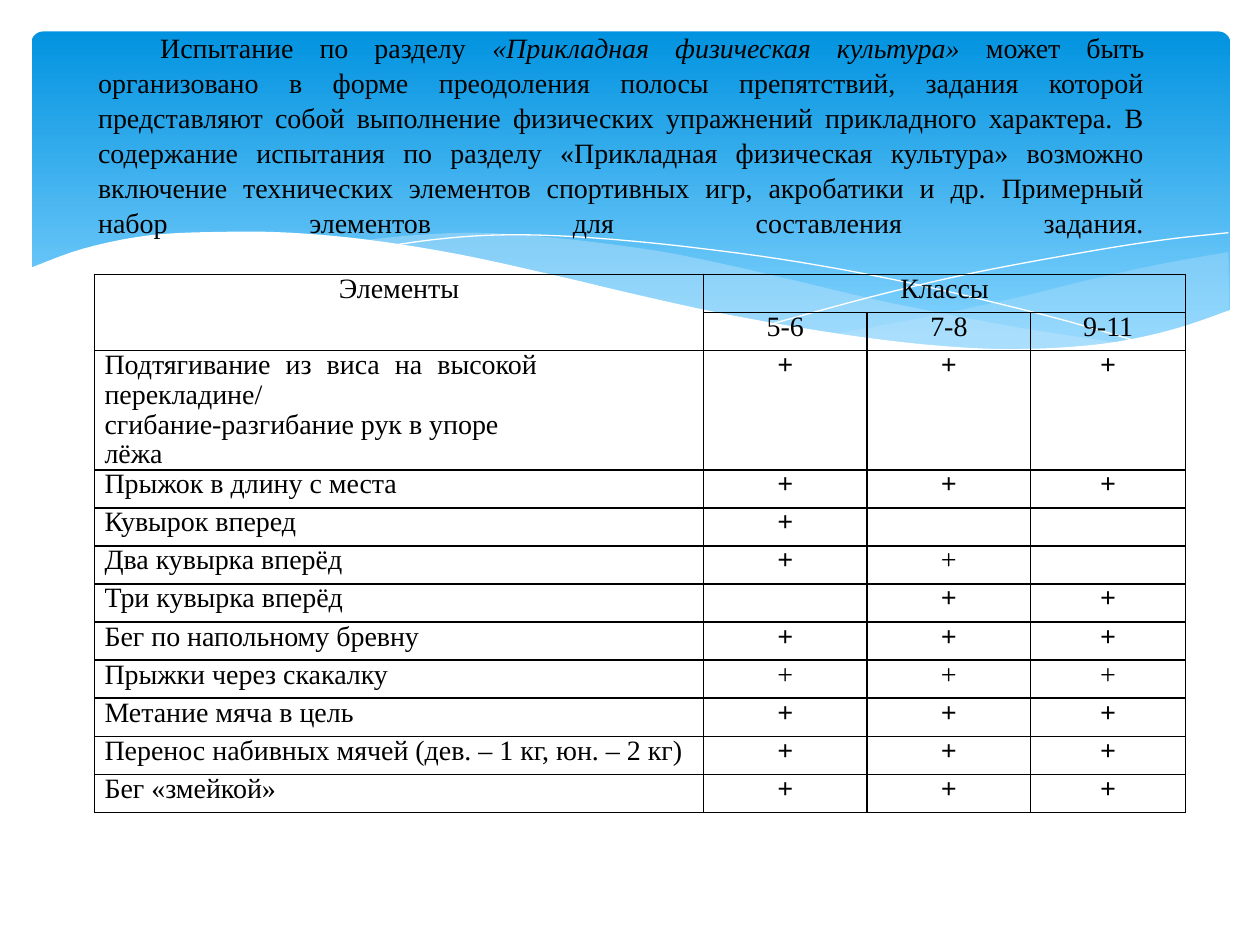
from lxml.etree import SubElement
from pptx import Presentation
from pptx.dml.color import RGBColor
from pptx.enum.shapes import MSO_SHAPE as Shape
from pptx.enum.text import MSO_ANCHOR as Anchor, PP_ALIGN as Align
from pptx.oxml.ns import qn
from pptx.util import Pt

BLACK = RGBColor(0, 0, 0)
WHITE = RGBColor(0xFF, 0xFF, 0xFF)
SKY_TOP = RGBColor(0x02, 0x93, 0xE0)
SKY_BOTTOM = RGBColor(0x83, 0xD3, 0xFE)
MIST = RGBColor(0xC6, 0xE7, 0xFC)
FONT = "Times New Roman"

RIGHT_WAVE_TOP = [(684, 126), (645, 133), (602, 142.5), (561.5, 152.5), (507, 164), (458, 173)]
RIGHT_WAVE_BOTTOM = [(458, 173), (500, 178), (535.5, 181.5), (575.5, 181.5), (616.5, 178.5),
                     (650, 171.5), (684.5, 160)]
LEFT_WAVE_TOP = [(188, 119.5), (218, 116.5), (255.5, 115), (300, 118), (352, 124.5), (391.5, 132),
                 (435, 142), (490.5, 155), (563, 169), (625, 178.5)]
LEFT_WAVE_BOTTOM = [(625, 178.5), (599, 181.5), (563, 182), (520.5, 180.5), (471.5, 175),
                    (414.5, 165.5), (363.5, 155), (305.5, 142), (258, 131), (228, 125.5), (188, 119.5)]
FALLING_LINE = [(204.5, 122.5), (229.5, 119), (260.5, 116.5), (294, 116.5), (334, 119), (382.5, 124),
                (440, 132), (505.5, 144.5), (580.5, 162.5), (635, 178)]
RISING_LINE = [(423.5, 167), (482.5, 151), (540.5, 137.5), (605.5, 125.5), (647.5, 119), (684, 115)]
WHITE_CREST = [(685.5, 159), (651.5, 170.5), (612, 178.5), (564.5, 181.5), (517.5, 179.5), (463, 173),
               (399, 162), (344, 150), (304, 140.5), (245, 127.5), (192, 119), (147.5, 115),
               (109.5, 114.5), (67.5, 116.5), (30, 124), (-1.5, 135.5)]
WHITE_BASE = [(-1.5, 219), (685.5, 219)]

INTRO = [
    ("Испытание по разделу ", False),
    ("«Прикладная физическая культура» ", True),
    ("может быть организовано в форме преодоления полосы препятствий, задания которой "
     "представляют собой выполнение физических упражнений прикладного характера. В содержание "
     "испытания по разделу «Прикладная физическая культура» возможно включение технических "
     "элементов спортивных игр, акробатики и др. Примерный набор элементов для составления "
     "задания.", False),
]

GRADES = ["5-6", "7-8", "9-11"]
PLUS, BOLD_PLUS, NONE = ("+", False), ("+", True), ("", False)
EXERCISES = [
    ("Подтягивание из виса на высокой перекладине/\nсгибание-разгибание рук в упоре лёжа",
     [BOLD_PLUS] * 3),
    ("Прыжок в длину с места", [BOLD_PLUS] * 3),
    ("Кувырок вперед", [BOLD_PLUS, NONE, NONE]),
    ("Два кувырка вперёд", [BOLD_PLUS, PLUS, NONE]),
    ("Три кувырка вперёд", [NONE, BOLD_PLUS, BOLD_PLUS]),
    ("Бег по напольному бревну", [BOLD_PLUS] * 3),
    ("Прыжки через скакалку", [PLUS] * 3),
    ("Метание мяча в цель", [BOLD_PLUS] * 3),
    ("Перенос набивных мячей (дев. – 1 кг, юн. – 2 кг)", [BOLD_PLUS] * 3),
    ("Бег «змейкой»", [BOLD_PLUS] * 3),
]
COLUMN_WIDTHS = [348, 93.5, 93.5, 88.5]
ROW_HEIGHT, TALL_ROW_HEIGHT = 21.75, 53.2


def smooth(knots, steps=5):
    """Return points of a Catmull-Rom curve through the knots."""
    padded = [knots[0], *knots, knots[-1]]
    curve = [knots[0]]
    for a, b, c, d in zip(padded, padded[1:], padded[2:], padded[3:]):
        for step in range(1, steps + 1):
            t = step / steps
            curve.append(tuple(
                (2 * q + (r - p) * t + (2 * p - 5 * q + 4 * r - s) * t ** 2
                 + (3 * q - p - 3 * r + s) * t ** 3) / 2
                for p, q, r, s in zip(a, b, c, d)))
    return curve


def add_outline(slide, left, top, points, closed):
    """Draw a path whose points are offsets from the given corner."""
    places = [(Pt(left + x), Pt(top + y)) for x, y in points]
    builder = slide.shapes.build_freeform(*places[0], scale=1.0)
    builder.add_line_segments(places[1:], close=closed)
    outline = builder.convert_to_shape()
    outline.shadow.inherit = False
    return outline


def add_wave(slide, left, top, points, color, opacity=100):
    """Draw a filled wave without a border."""
    wave = add_outline(slide, left, top, points, True)
    wave.fill.solid()
    wave.fill.fore_color.rgb = color
    wave.line.fill.background()
    if opacity < 100:
        tint = wave.element.spPr.find(".//" + qn("a:srgbClr"))
        SubElement(tint, qn("a:alpha"), val=str(opacity * 1000))


def add_banner(slide, left, top, width, height):
    """Draw the blue gradient banner with its waves."""
    sky = slide.shapes.add_shape(Shape.ROUNDED_RECTANGLE, Pt(left), Pt(top), Pt(width), Pt(height))
    sky.adjustments[0] = 0.034
    sky.shadow.inherit = False
    sky.line.fill.background()
    sky.fill.gradient()
    sky.fill.gradient_angle = 270
    for stop, color, position in zip(sky.fill.gradient_stops, (SKY_TOP, SKY_BOTTOM), (0, 0.9)):
        stop.color.rgb = color
        stop.position = position
    add_wave(slide, left, top, smooth(RIGHT_WAVE_TOP) + smooth(RIGHT_WAVE_BOTTOM), MIST, 29)
    add_wave(slide, left, top, smooth(LEFT_WAVE_TOP) + smooth(LEFT_WAVE_BOTTOM), MIST, 40)
    for knots in (FALLING_LINE, RISING_LINE):
        streak = add_outline(slide, left, top, smooth(knots), False)
        streak.fill.background()
        streak.line.color.rgb = WHITE
        streak.line.width = Pt(0)
    add_wave(slide, left, top, smooth(WHITE_CREST) + WHITE_BASE, WHITE)


def style_run(run, bold=False, italic=False):
    """Apply the common font to a run."""
    run.font.name = FONT
    run.font.size = Pt(16)
    run.font.color.rgb = BLACK
    run.font.bold = bold
    run.font.italic = italic


def add_intro(slide, left, top, width, height):
    """Place the justified introduction."""
    frame = slide.shapes.add_textbox(Pt(left), Pt(top), Pt(width), Pt(height)).text_frame
    frame.word_wrap = True
    frame.vertical_anchor = Anchor.MIDDLE
    paragraph = frame.paragraphs[0]
    paragraph.alignment = Align.JUSTIFY
    paragraph.line_spacing = 1.04
    indents = paragraph._p.get_or_add_pPr()
    for side, amount in (("marL", 13), ("marR", 23), ("indent", 35.5)):
        indents.set(side, str(Pt(amount)))
    for text, italic in INTRO:
        run = paragraph.add_run()
        run.text = text
        style_run(run, italic=italic)
    paragraph.add_line_break()
    SubElement(paragraph._p, qn("a:endParaRPr"), sz="1600")


def fill_cell(cell, text="", bold=False, align=Align.CENTER, indent=0):
    """Write one bordered, unfilled cell."""
    cell.margin_left = cell.margin_right = cell.margin_top = cell.margin_bottom = 0
    cell.text_frame.text = text
    for paragraph in cell.text_frame.paragraphs:
        paragraph.alignment = align
        paragraph.line_spacing = 0.96
        paragraph._p.get_or_add_pPr().set("marL", str(Pt(indent)))
        for run in paragraph.runs:
            style_run(run, bold)
        if not text:
            SubElement(paragraph._p, qn("a:endParaRPr"), sz="1600")
    borders = cell._tc.get_or_add_tcPr()
    for side in ("a:lnL", "a:lnR", "a:lnT", "a:lnB"):
        border = SubElement(borders, qn(side), w=str(Pt(1)))
        SubElement(SubElement(border, qn("a:solidFill")), qn("a:srgbClr"), val=str(BLACK))
    cell.fill.background()


def add_exercises(slide, left, top):
    """Place the table of exercises by grade."""
    heights = [ROW_HEIGHT] * 2 + [TALL_ROW_HEIGHT] + [ROW_HEIGHT] * (len(EXERCISES) - 1)
    table = slide.shapes.add_table(len(heights), len(COLUMN_WIDTHS), Pt(left), Pt(top),
                                   Pt(sum(COLUMN_WIDTHS)), Pt(sum(heights))).table
    table.first_row = table.horz_banding = False
    for column, width in zip(table.columns, COLUMN_WIDTHS):
        column.width = Pt(width)
    for row, height in zip(table.rows, heights):
        row.height = Pt(height)
    headings = [["Элементы", "Классы", "", ""], ["", *GRADES]]
    for r, labels in enumerate(headings):
        for c, label in enumerate(labels):
            fill_cell(table.cell(r, c), label)
    table.cell(0, 0).merge(table.cell(1, 0))
    table.cell(0, 1).merge(table.cell(0, 3))
    for r, (exercise, marks) in enumerate(EXERCISES, len(headings)):
        fill_cell(table.cell(r, 0), exercise, align=Align.LEFT, indent=5.75)
        for c, (mark, bold) in enumerate(marks, 1):
            fill_cell(table.cell(r, c), mark, bold)
    pull_up = table.cell(2, 0).text_frame.paragraphs[0]
    pull_up.alignment = Align.JUSTIFY
    pull_up._p.get_or_add_pPr().set("marR", str(Pt(95)))


def main():
    """Build and save the slide."""
    deck = Presentation()
    deck.slide_width, deck.slide_height = Pt(720), Pt(540)
    slide = deck.slides.add_slide(deck.slide_layouts[6])
    add_banner(slide, 18, 18, 685, 194.5)
    add_exercises(slide, 54, 156.75)
    add_intro(slide, 36, 21.6, 648, 129.6)
    deck.save("out.pptx")


if __name__ == "__main__":
    main()
